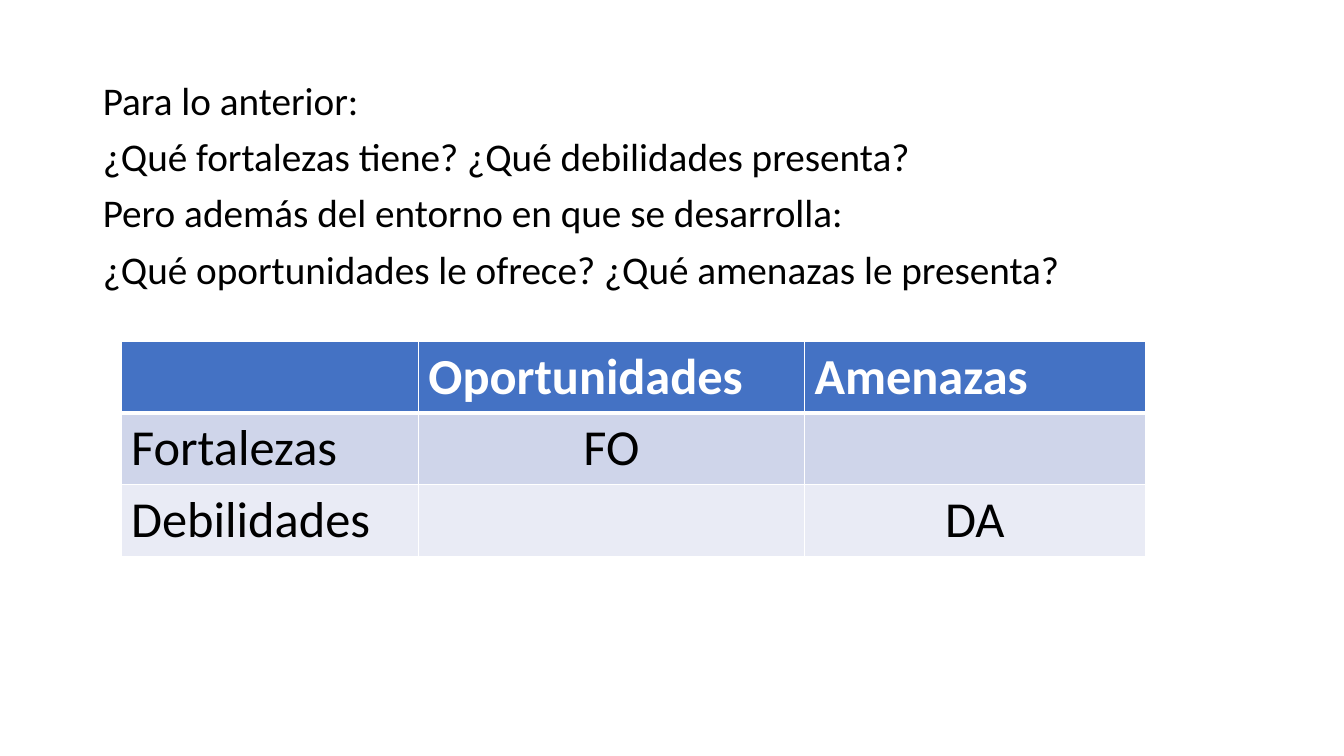
from lxml.etree import SubElement as Sub
from pptx import Presentation
from pptx.dml.color import RGBColor as Rgb
from pptx.enum.text import MSO_AUTO_SIZE as Fit, PP_ALIGN as Align
from pptx.oxml.ns import qn
from pptx.util import Inches, Pt

WIDE, HIGH = Inches(13.33), Inches(7.5)
FONT = "Calibri"
HUES = {"ink": "000000", "white": "FFFFFF", "head": "4472C4",
        "odd": "CFD5EA", "even": "E9EBF5"}
LINES = [
    "Para lo anterior:",
    "¿Qué fortalezas tiene? ¿Qué debilidades presenta?",
    "Pero además del entorno en que se desarrolla:",
    "¿Qué oportunidades le ofrece? ¿Qué amenazas le presenta?",
]
GRID = [
    ["", "Oportunidades", "Amenazas"],
    ["Fortalezas", "FO", ""],
    ["Debilidades", "", "DA"],
]
COLS = [2.95, 3.83, 3.38]
ROW = 0.7


def style(font, size, hue, bold=False):
    font.name, font.size, font.bold = FONT, Pt(size), bold
    font.color.rgb = Rgb.from_string(HUES[hue])


def place(shape, left, top, width, height):
    shape.left, shape.width = int(WIDE * left), int(WIDE * width)
    shape.top, shape.height = int(HIGH * top), int(HIGH * height)


def add_lines(body):
    place(body, 0.069, 0.101, 0.863, 0.8)
    frame = body.text_frame
    frame.text = "\n".join(LINES)
    frame.auto_size = Fit.NONE
    for para in frame.paragraphs:
        para.line_spacing, para.space_before = 0.9, Pt(10)
        props = para._p.get_or_add_pPr()
        props.set("marL", "0")
        props.set("indent", "0")
        Sub(props, qn("a:buNone"))
        for run in para.runs:
            style(run.font, 28, "ink")


def add_edges(cell, row):
    props = cell._tc.get_or_add_tcPr()
    thick = {"T": 3 if row == 1 else 1, "B": 3 if row == 0 else 1}
    for spot, side in enumerate("LRTB"):
        line = Sub(props, qn("a:ln" + side), w=str(Pt(thick.get(side, 1))))
        fill = Sub(line, qn("a:solidFill"))
        Sub(fill, qn("a:srgbClr"), val=HUES["white"])
        props.insert(spot, line)


def fill_cell(cell, text, row, col):
    hue = ("head", "odd", "even")[row]
    cell.fill.solid()
    cell.fill.fore_color.rgb = Rgb.from_string(HUES[hue])
    add_edges(cell, row)
    cell.text_frame.text = text
    para = cell.text_frame.paragraphs[0]
    if row and col:
        para.alignment = Align.CENTER
    for run in para.runs:
        style(run.font, 36, "ink" if row else "white", not row)


def add_grid(slide):
    frame = slide.shapes.add_table(
        len(GRID), len(COLS), int(WIDE * 0.09), int(HIGH * 0.451),
        Inches(sum(COLS)), Inches(ROW * len(GRID)))
    table = frame.table
    for col, width in zip(table.columns, COLS):
        col.width = Inches(width)
    for row, words in enumerate(GRID):
        table.rows[row].height = Inches(ROW)
        for col, text in enumerate(words):
            fill_cell(table.cell(row, col), text, row, col)


def main():
    deck = Presentation()
    deck.slide_width, deck.slide_height = WIDE, HIGH
    slide = deck.slides.add_slide(deck.slide_layouts[1])
    title = slide.shapes.title._element
    title.getparent().remove(title)
    add_lines(slide.placeholders[1])
    add_grid(slide)
    deck.save("out.pptx")


if __name__ == "__main__":
    main()
